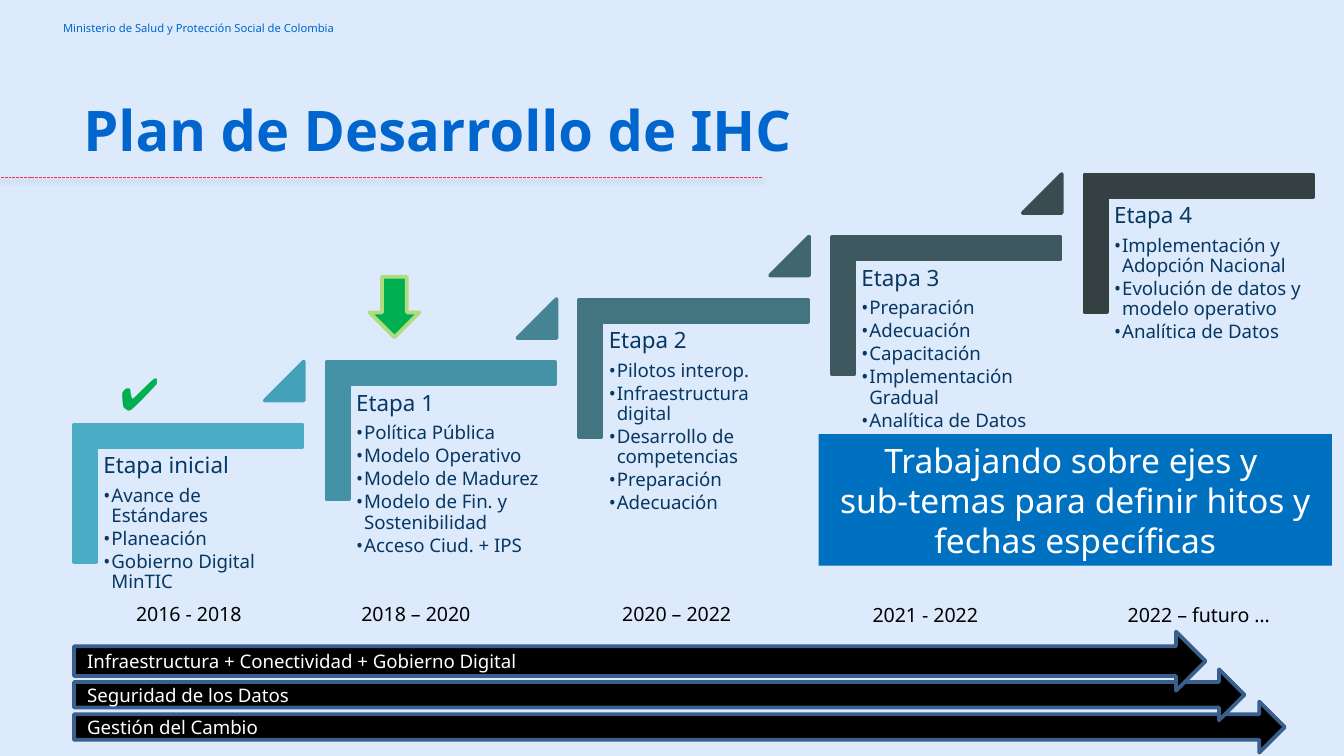
from lxml.etree import SubElement
from pptx import Presentation
from pptx.dml.color import RGBColor
from pptx.enum.dml import MSO_LINE
from pptx.enum.shapes import MSO_CONNECTOR, MSO_SHAPE as Shape
from pptx.enum.text import MSO_ANCHOR as Anchor, PP_ALIGN as Align
from pptx.oxml.ns import qn
from pptx.util import Inches, Pt

WIDTH = 10
HEIGHT = WIDTH * 9 / 16
STEP_X, STEP_Y = 1.88, 0.465
FONT = "Noto Sans"

BACKGROUND = RGBColor(0xDC, 0xEA, 0xFB)
TITLE_BLUE = RGBColor(0x00, 0x66, 0xCD)
NAVY = RGBColor(0x07, 0x37, 0x63)
BLACK = RGBColor(0x00, 0x00, 0x00)
WHITE = RGBColor(0xFF, 0xFF, 0xFF)
ARROW_EDGE = RGBColor(0x3A, 0x5F, 0x8C)
CALLOUT_BLUE = RGBColor(0x00, 0x70, 0xC0)
GREEN = RGBColor(0x00, 0xB0, 0x50)
LIME = RGBColor(0xAF, 0xDC, 0x7E)
PINK = RGBColor(0xF4, 0x2F, 0x5A)

STAGES = [
    ("Etapa inicial", RGBColor(0x4B, 0xAC, 0xC6),
     ["Avance de Estándares", "Planeación", "Gobierno Digital MinTIC"]),
    ("Etapa 1", RGBColor(0x44, 0x92, 0xA6),
     ["Política Pública", "Modelo Operativo", "Modelo de Madurez",
      "Modelo de Fin. y Sostenibilidad", "Acceso Ciud. + IPS"]),
    ("Etapa 2", RGBColor(0x43, 0x75, 0x81),
     ["Pilotos interop.", "Infraestructura digital", "Desarrollo de competencias",
      "Preparación", "Adecuación"]),
    ("Etapa 3", RGBColor(0x3D, 0x59, 0x5F),
     ["Preparación", "Adecuación", "Capacitación", "Implementación Gradual",
      "Analítica de Datos"]),
    ("Etapa 4", RGBColor(0x34, 0x40, 0x42),
     ["Implementación y Adopción Nacional", "Evolución de datos y modelo operativo",
      "Analítica de Datos"]),
]
RISERS = [RGBColor(0x43, 0xA2, 0xBA), RGBColor(0x44, 0x84, 0x93),
          RGBColor(0x40, 0x67, 0x70), RGBColor(0x39, 0x4C, 0x50)]
PERIODS = [
    ("2016 - 2018", (0.77, 4.43, 1.27, 0.27)),
    ("2018 – 2020", (2.46, 4.43, 1.27, 0.27)),
    ("2020 – 2022", (4.4, 4.43, 1.27, 0.27)),
    ("2021 - 2022", (6.25, 4.44, 1.27, 0.27)),
    ("2022 – futuro …", (8.2, 4.44, 1.44, 0.27)),
]
AXES = [
    ("Gestión del Cambio", (0.55, 5.22, 9.01, 0.38)),
    ("Seguridad de los Datos", (0.55, 4.98, 8.71, 0.38)),
    ("Infraestructura + Conectividad + Gobierno Digital", (0.55, 4.7, 8.42, 0.44)),
]


def apply(target, values):
    """Set each attribute of the target from a dict."""
    for name, value in values.items():
        setattr(target, name, value)


def write(paragraph, text, size, color, bold=False, **layout):
    """Fill one paragraph with styled text."""
    paragraph.text = text
    apply(paragraph, layout)
    for run in paragraph.runs:
        apply(run.font, {"name": FONT, "size": Pt(size), "bold": bold})
        run.font.color.rgb = color


def prepare_frame(shape, insets, anchor=Anchor.TOP):
    """Set wrapping, anchor and horizontal and vertical insets of a frame."""
    side, edge = map(Inches, insets)
    apply(shape.text_frame, {
        "word_wrap": True, "vertical_anchor": anchor,
        "margin_left": side, "margin_right": side,
        "margin_top": edge, "margin_bottom": edge})
    return shape.text_frame


def add_label(slide, box, text, size, color, insets=(0.1, 0.05),
              anchor=Anchor.TOP, **style):
    """Place a text box holding a single paragraph."""
    shape = slide.shapes.add_textbox(*map(Inches, box))
    frame = prepare_frame(shape, insets, anchor)
    write(frame.paragraphs[0], text, size, color, **style)


def add_figure(slide, kind, box, fill, edge=None, adjustments=(), rotation=0):
    """Place a flat preset shape with an optional outline."""
    shape = slide.shapes.add_shape(kind, *map(Inches, box))
    shape.shadow.inherit = False
    shape.rotation = rotation
    shape.fill.solid()
    shape.fill.fore_color.rgb = fill
    if edge is None:
        shape.line.fill.background()
    else:
        shape.line.color.rgb = edge
        shape.line.width = Pt(2)
    for index, value in enumerate(adjustments):
        shape.adjustments[index] = value
    return shape


def add_bullet(paragraph):
    """Give a paragraph a hanging navy bullet."""
    properties = paragraph._p.get_or_add_pPr()
    properties.set("marL", str(Inches(0.06)))
    properties.set("indent", str(Inches(-0.06)))
    color = SubElement(properties, qn("a:buClr"))
    SubElement(color, qn("a:srgbClr")).set("val", str(NAVY))
    SubElement(properties, qn("a:buFont")).set("typeface", FONT)
    SubElement(properties, qn("a:buChar")).set("char", "•")


def add_rule(slide, left, right, top):
    """Draw the dashed title rule with its soft shadow."""
    rule = slide.shapes.add_connector(
        MSO_CONNECTOR.STRAIGHT, *map(Inches, (right, top, left, top)))
    rule.line.color.rgb = PINK
    apply(rule.line, {"width": Pt(0.5), "dash_style": MSO_LINE.SQUARE_DOT})
    rule.line._ln.prstDash.set("val", "sysDash")
    effects = SubElement(rule._element.spPr, qn("a:effectLst"))
    shadow = SubElement(effects, qn("a:outerShdw"), blurRad=str(Pt(3.1)),
                        dist=str(Pt(1.6)), dir="5400000", rotWithShape="0")
    color = SubElement(shadow, qn("a:srgbClr"), val=str(BLACK))
    SubElement(color, qn("a:alpha"), val="38000")


def add_header(slide):
    """Place the ministry name and the slide title."""
    insets = (0.07, 0.04)
    add_label(slide, (0.4, 0.11, 2.34, 0.2),
              "Ministerio de Salud y Protección Social de Colombia",
              6, TITLE_BLUE, insets, Anchor.MIDDLE)
    add_label(slide, (0.55, 0.64, 8.58, 0.7), "Plan de Desarrollo de IHC",
              30, TITLE_BLUE, insets, Anchor.MIDDLE, bold=True, line_spacing=0.9)


def add_stage(slide, left, top, name, color, topics):
    """Build one stair with its heading and topics from its top left corner."""
    add_figure(slide, Shape.CORNER, (left + 0.34, top - 0.34, 1.02, 1.7),
               color, color, (0.161, 0.161), 90)
    box = slide.shapes.add_textbox(
        *map(Inches, (left + 0.17, top + 0.17, 1.54, 1.35)))
    frame = prepare_frame(box, (0.05, 0.05))
    write(frame.paragraphs[0], name, 12, NAVY, line_spacing=0.9, space_after=Pt(4.2))
    for topic in topics:
        paragraph = frame.add_paragraph()
        write(paragraph, topic, 10, NAVY, level=1, line_spacing=0.9,
              space_after=Pt(1.5))
        add_bullet(paragraph)


def add_staircase(slide, left, top):
    """Lay out the rising stages and the triangles between them."""
    for index, stage in enumerate(STAGES):
        x, y = left + index * STEP_X, top - index * STEP_Y
        add_stage(slide, x, y, *stage)
        if index < len(RISERS):
            color = RISERS[index]
            add_figure(slide, Shape.ISOSCELES_TRIANGLE,
                       (x + 1.42, y - 0.47, 0.29, 0.29), color, color, (1,))


def add_timeline(slide):
    """Place the crosscutting arrows and the period labels."""
    for text, box in AXES:
        arrow = add_figure(slide, Shape.RIGHT_ARROW, box, BLACK, ARROW_EDGE, (0.5, 0.5))
        frame = prepare_frame(arrow, (0.1, 0.05), Anchor.MIDDLE)
        write(frame.paragraphs[0], text, 10, WHITE, alignment=Align.LEFT)
    for text, box in PERIODS:
        add_label(slide, box, text, 10.5, BLACK, alignment=Align.CENTER)


def add_highlights(slide):
    """Place the callout and the progress marks."""
    callout = add_figure(slide, Shape.RECTANGLE, (6.09, 3.23, 3.82, 0.98), CALLOUT_BLUE)
    frame = prepare_frame(callout, (0.08, 0.04))
    write(frame.paragraphs[0],
          "Trabajando sobre ejes y \nsub-temas para definir hitos y fechas específicas",
          18, WHITE, alignment=Align.CENTER)
    add_label(slide, (0.77, 2.67, 0.54, 0.5), "✔", 24, GREEN,
              anchor=Anchor.MIDDLE, alignment=Align.CENTER)
    add_figure(slide, Shape.DOWN_ARROW, (2.75, 2.06, 0.37, 0.45), GREEN, LIME, (0.5, 0.5))


def main():
    """Build and save the presentation."""
    presentation = Presentation()
    apply(presentation, {"slide_width": Inches(WIDTH), "slide_height": Inches(HEIGHT)})
    slide = presentation.slides.add_slide(presentation.slide_layouts[6])
    slide.background.fill.solid()
    slide.background.fill.fore_color.rgb = BACKGROUND
    add_header(slide)
    add_staircase(slide, 0.55, 3.16)
    add_timeline(slide)
    add_highlights(slide)
    add_rule(slide, -0.05, 5.67, 1.32)
    presentation.save("out.pptx")


if __name__ == "__main__":
    main()
